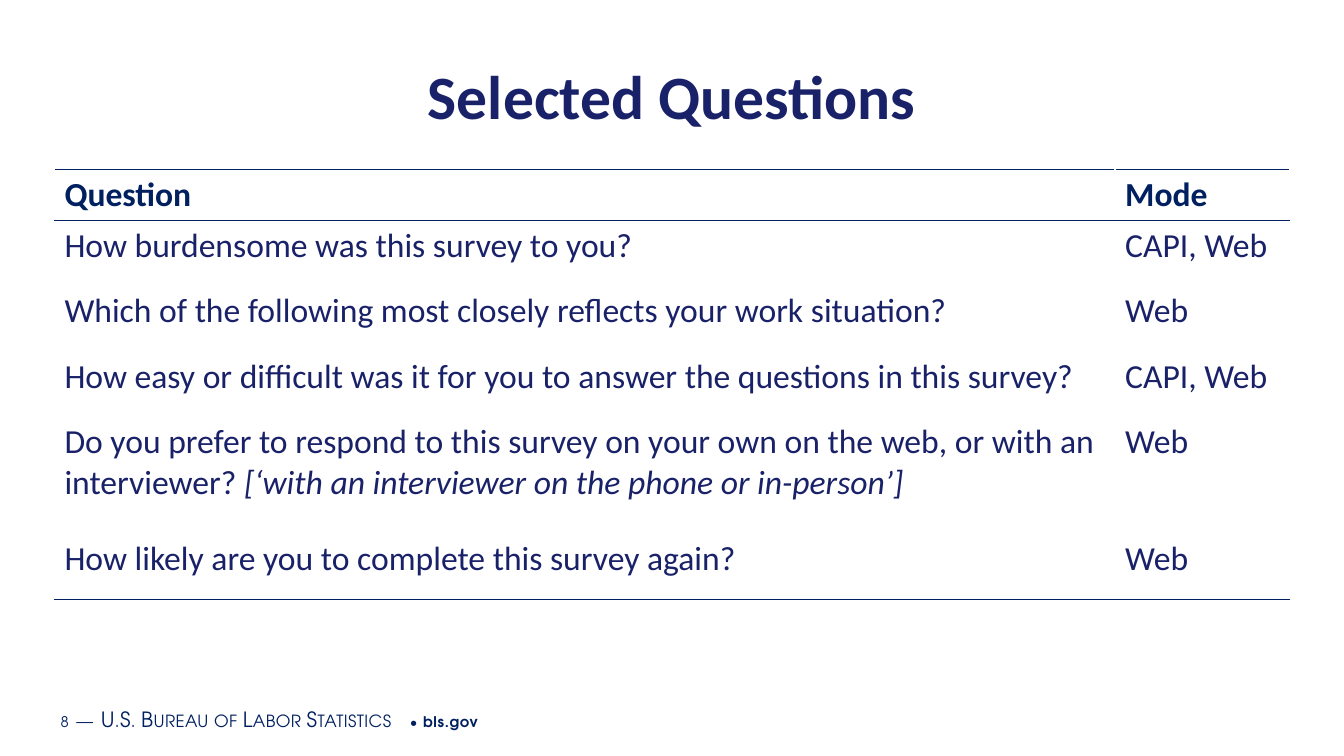
from lxml.etree import SubElement
from pptx import Presentation
from pptx.dml.color import RGBColor
from pptx.enum.text import MSO_ANCHOR, PP_ALIGN
from pptx.oxml.ns import qn
from pptx.util import Inches, Pt

NAVY = RGBColor(0x00, 0x20, 0x60)
INDIGO = RGBColor(0x19, 0x21, 0x68)
WHITE = RGBColor(0xFF, 0xFF, 0xFF)

LEFT, WIDTH = 4.05, 91.9  # shared by title and table, percent of slide width
QUESTION_COL, MODE_COL = 78.92, 12.98
HEADER_ROW, LINE_ROW, TALL_ROW = 6.72, 8.67, 15.47  # percent of slide height

# Each question is a list of (text, italic) runs
QUESTIONS = [
    ([("How burdensome was this survey to you?", False)], "CAPI, Web", LINE_ROW),
    ([("Which of the following most closely reflects your work situation?", False)],
     "Web", LINE_ROW),
    ([("How easy or difficult was it for you to answer the questions in this survey?", False)],
     "CAPI, Web", LINE_ROW),
    ([("Do you prefer to respond to this survey on your own on the web, or with an interviewer? ",
       False),
      ("[‘with an interviewer on the phone or in-person’]", True)], "Web", TALL_ROW),
    ([("How likely are you to complete this survey again?", False)], "Web", LINE_ROW),
]

# Text, size, letter spacing in hundredths of a point, small caps, bold
FOOTER = [
    ("8", 10.5, 50, False, False),
    (" ", 16, 50, False, False),
    ("—", 15, 30, True, False),
    (" ", 16, 50, False, False),
    ("U.S. Bureau of Labor Statistics", 15, 30, True, False),
    (" • ", 10.5, 50, False, False),
    ("bls.gov", 10.5, 50, False, True),
]


class Deck:
    """Holds the style and the current slide; lengths are percent of the slide."""

    body_font, footer_font = "Calibri", "TeX Gyre Adventor"

    def __init__(self):
        self.prs = Presentation()
        self.prs.slide_width, self.prs.slide_height = Inches(13.33), Inches(7.5)
        self.s = self.prs.slides.add_slide(self.prs.slide_layouts[5])

    def x(self, share):
        return round(self.prs.slide_width * share / 100)

    def y(self, share):
        return round(self.prs.slide_height * share / 100)

    def box(self, left, top, width, height):
        return self.x(left), self.y(top), self.x(width), self.y(height)

    def style(self, p, size, color, bold=False):
        p.font.name, p.font.size, p.font.bold = self.body_font, Pt(size), bold
        p.font.color.rgb = color

    def title(self, text, *place):
        sp = self.s.shapes.title
        sp.left, sp.top, sp.width, sp.height = self.box(*place)
        tf = sp.text_frame
        tf.text, tf.vertical_anchor = text, MSO_ANCHOR.MIDDLE
        tf.paragraphs[0].alignment = PP_ALIGN.CENTER
        self.style(tf.paragraphs[0], 44, INDIGO, True)

    def footer(self, parts, *place):
        tf = self.s.shapes.add_textbox(*self.box(*place)).text_frame
        tf.word_wrap, tf.vertical_anchor = True, MSO_ANCHOR.MIDDLE
        tf.margin_left = tf.margin_right = Inches(0.07)
        tf.margin_top = tf.margin_bottom = Inches(0.04)
        p = tf.paragraphs[0]
        p.font.name, p.font.color.rgb = self.footer_font, NAVY
        for text, size, spacing, small_caps, bold in parts:
            r = p.add_run()
            r.text, r.font.size, r.font.bold = text, Pt(size), bold
            rPr = r._r.get_or_add_rPr()
            rPr.set("spc", str(spacing))
            if small_caps:
                rPr.set("cap", "small")

    def borders(self, cell, top, bottom):
        tcPr = cell._tc.get_or_add_tcPr()
        for side, color in (("L", WHITE), ("R", WHITE), ("T", top), ("B", bottom)):
            ln = SubElement(tcPr, qn(f"a:ln{side}"), w=str(Pt(1)))
            fill = SubElement(ln, qn("a:solidFill"))
            SubElement(fill, qn("a:srgbClr"), val=str(color))

    def cell(self, cell, runs, color, bold, top, bottom):
        self.borders(cell, top, bottom)
        cell.fill.background()
        p = cell.text_frame.paragraphs[0]
        self.style(p, 24, color, bold)
        for text, italic in runs:
            r = p.add_run()
            r.text = text
            if italic:
                r.font.italic = True

    def table(self, header, questions, left, top, columns):
        heights = [HEADER_ROW] + [height for _, _, height in questions]
        place = self.box(left, top, sum(columns), sum(heights))
        table = self.s.shapes.add_table(len(heights), len(columns), *place).table
        table.first_row = table.horz_banding = False
        for column, width in zip(table.columns, columns):
            column.width = self.x(width)
        for row, height in zip(table.rows, heights):
            row.height = self.y(height)

        rows = [[[(name, False)] for name in header]]
        rows += [[runs, [(mode, False)]] for runs, mode, _ in questions]
        last = len(rows) - 1
        for i, row in enumerate(rows):
            # Rules run around the header and below the last question
            above = NAVY if i <= 1 else WHITE
            below = NAVY if i in (0, last) else WHITE
            for j, runs in enumerate(row):
                self.cell(table.cell(i, j), runs, INDIGO if i else NAVY, i == 0, above, below)


def main():
    deck = Deck()
    # Footer line
    deck.footer(FOOTER, 3.98, 92.4, 63.54, 5.33)
    # Title
    deck.title("Selected Questions", LEFT, 6.67, WIDTH, 11.73)
    # Questions and survey modes
    deck.table(["Question", "Mode"], QUESTIONS, LEFT, 22.4, [QUESTION_COL, MODE_COL])
    deck.prs.save("out.pptx")


if __name__ == "__main__":
    main()
